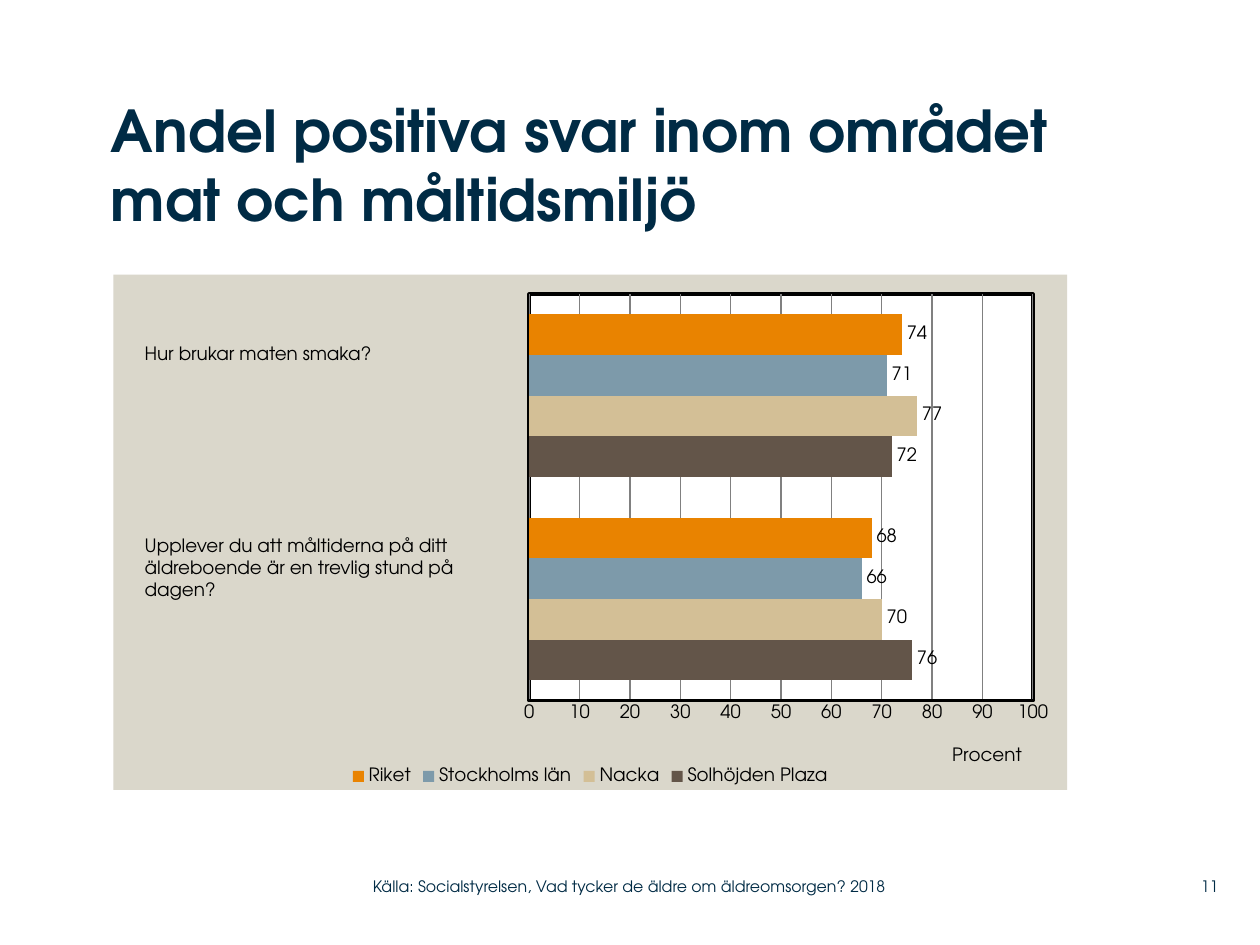
from pptx import Presentation
from pptx.chart.data import CategoryChartData
from pptx.dml.color import RGBColor
from pptx.enum.chart import XL_CHART_TYPE, XL_LABEL_POSITION, XL_LEGEND_POSITION, XL_TICK_MARK
from pptx.enum.text import MSO_ANCHOR, PP_ALIGN
from pptx.oxml import parse_xml
from pptx.oxml.ns import nsdecls, qn
from pptx.util import Inches, Pt

BAR_CLUSTERED = XL_CHART_TYPE.BAR_CLUSTERED
OUTSIDE_END = XL_LABEL_POSITION.OUTSIDE_END
LEGEND_BOTTOM = XL_LEGEND_POSITION.BOTTOM
NO_TICK = XL_TICK_MARK.NONE
TOP, MIDDLE = MSO_ANCHOR.TOP, MSO_ANCHOR.MIDDLE
LEFT, RIGHT = PP_ALIGN.LEFT, PP_ALIGN.RIGHT

FONT = "TeX Gyre Adventor"
NAVY = RGBColor(0x00, 0x2B, 0x45)
BLACK = RGBColor(0x00, 0x00, 0x00)
WHITE = RGBColor(0xFF, 0xFF, 0xFF)
GREY = RGBColor(0x80, 0x80, 0x80)
SAND = RGBColor(0xDA, 0xD7, 0xCB)
BROWN = RGBColor(0x63, 0x55, 0x49)
BEIGE = RGBColor(0xD3, 0xBF, 0x96)
BLUE = RGBColor(0x7D, 0x9A, 0xAA)
ORANGE = RGBColor(0xE9, 0x83, 0x00)

# Name, values from the lowest group upwards, colour
SERIES = [
    ("Solhöjden Plaza", (76, 72), BROWN),
    ("Nacka", (70, 77), BEIGE),
    ("Stockholms län", (66, 71), BLUE),
    ("Riket", (68, 74), ORANGE),
]


def style_font(font, size=10.5, color=BLACK, bold=False):
    font.name, font.size, font.bold = FONT, Pt(size), bold
    font.color.rgb = color


def layout_xml(x, y, w=None, h=None):
    """Manual chart layout in fractions of the chart; a size makes it an inner plot layout."""
    parts = [("xMode", "edge"), ("yMode", "edge"), ("x", x), ("y", y)]
    if w is not None:
        parts = [("layoutTarget", "inner")] + parts + [("w", w), ("h", h)]
    body = "".join(f'<c:{tag} val="{value}"/>' for tag, value in parts)
    return parse_xml(f'<c:layout {nsdecls("c")}><c:manualLayout>{body}'
                     '</c:manualLayout></c:layout>')


def area_xml(fill, line=None, width=0):
    outline = "<a:ln><a:noFill/></a:ln>"
    if line is not None:
        outline = (f'<a:ln w="{Pt(width)}"><a:solidFill><a:srgbClr val="{line}"/>'
                   '</a:solidFill></a:ln>')
    return parse_xml(f'<c:spPr {nsdecls("c", "a")}><a:solidFill><a:srgbClr val="{fill}"/>'
                     f'</a:solidFill>{outline}</c:spPr>')


def set_layout(parent, index, layout):
    for old in parent.findall(qn("c:layout")):
        parent.remove(old)
    parent.insert(index, layout)


class SurveyPage:
    def __init__(self, deck):
        self.page = deck.slides.add_slide(deck.slide_layouts[6])

    def text(self, text, left, top, width, height, *, size=10.5, color=BLACK, bold=False,
             align=LEFT, anchor=TOP, inset=True):
        box = self.page.shapes.add_textbox(Inches(left), Inches(top),
                                           Inches(width), Inches(height))
        frame = box.text_frame
        frame.word_wrap = True
        frame.vertical_anchor = anchor
        if not inset:
            frame.margin_left = frame.margin_right = 0
            frame.margin_top = frame.margin_bottom = 0
        para = frame.paragraphs[0]
        para.alignment = align
        span = para.add_run()
        span.text = text
        style_font(span.font, size, color, bold)

    def bar_chart(self, left, top, width, height):
        data = CategoryChartData(number_format="0")
        data.categories = ["1", "2"]
        for name, values, _ in SERIES:
            data.add_series(name, values)
        chart = self.page.shapes.add_chart(BAR_CLUSTERED, Inches(left), Inches(top),
                                           Inches(width), Inches(height), data).chart
        chart.has_title = False
        style_font(chart.font)
        self.style_bars(chart.plots[0])
        self.style_axes(chart)

        chart.has_legend = True
        chart.legend.position = LEGEND_BOTTOM
        chart.legend.include_in_layout = False
        style_font(chart.legend.font)

        space = chart.element
        space.find(qn("c:chart")).addnext(area_xml(SAND))
        plot_area = space.find(qn("c:chart")).find(qn("c:plotArea"))
        set_layout(plot_area, 0, layout_xml(0.436, 0.038, 0.528, 0.789))
        plot_area.append(area_xml(WHITE, BLACK, 2))

    def style_bars(self, plot):
        plot.gap_width, plot.overlap = 100, 0
        plot.vary_by_categories = False
        for series, (_, _, color) in zip(plot.series, SERIES):
            series.format.fill.solid()
            series.format.fill.fore_color.rgb = color
            labels = series.data_labels
            labels.show_value = True
            labels.position = OUTSIDE_END
            style_font(labels.font)

    def style_axes(self, chart):
        chart.category_axis.visible = False
        axis = chart.value_axis
        axis.minimum_scale, axis.maximum_scale, axis.major_unit = 0, 100, 10
        axis.major_tick_mark = axis.minor_tick_mark = NO_TICK
        axis.format.line.color.rgb = BLACK
        axis.format.line.width = Pt(2)
        axis.has_major_gridlines = True
        axis.major_gridlines.format.line.color.rgb = GREY
        axis.major_gridlines.format.line.width = Pt(0.75)
        style_font(axis.tick_labels.font)
        axis.has_title = True
        title = axis.axis_title
        span = title.text_frame.paragraphs[0].add_run()
        span.text = "Procent"
        style_font(span.font)
        set_layout(title._element, 1, layout_xml(0.876, 0.908))


def main():
    deck = Presentation()
    deck.slide_width, deck.slide_height = Inches(10), Inches(7.5)
    survey = SurveyPage(deck)
    survey.bar_chart(0.9, 2.18, 7.57, 4.09)
    survey.text("Andel positiva svar inom området mat och måltidsmiljö",
                0.88, 0.75, 8.42, 1.42, size=33, color=NAVY, bold=True, inset=False)
    survey.text("Hur brukar maten smaka?", 1.05, 2.67, 2.97, 0.28)
    survey.text("Upplever du att måltiderna på ditt äldreboende är en trevlig stund på dagen?",
                1.05, 4.19, 2.93, 0.63)
    footer = {"size": 9, "color": NAVY, "anchor": MIDDLE, "inset": False}
    survey.text("11", 9.2, 6.89, 0.47, 0.29, align=RIGHT, **footer)
    survey.text("Källa: Socialstyrelsen, Vad tycker de äldre om äldreomsorgen? 2018",
                2.96, 6.89, 4.43, 0.29, **footer)
    deck.save("out.pptx")


if __name__ == "__main__":
    main()
